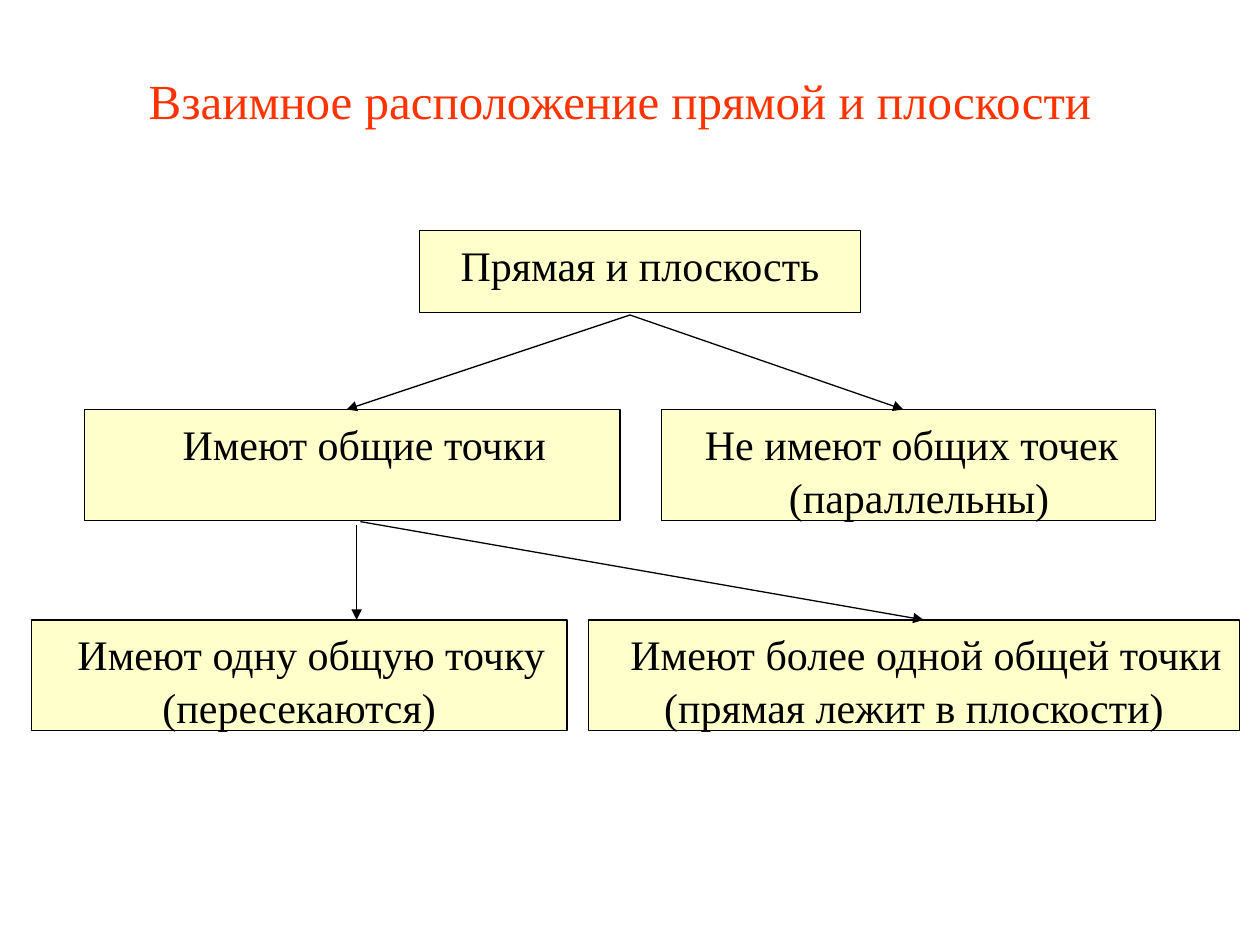
from lxml.etree import SubElement
from pptx import Presentation
from pptx.dml.color import RGBColor as RGB
from pptx.enum.shapes import MSO_CONNECTOR as CONN, MSO_SHAPE as SHAPE
from pptx.enum.text import MSO_ANCHOR as ANCHOR, PP_ALIGN as ALIGN
from pptx.oxml.ns import qn
from pptx.util import Inches, Pt

TITLE = "Взаимное расположение прямой и плоскости"
ROWS = [
    (1.83, 0.65, [
        (3.33, 3.5, [("Прямая и плоскость", 0)]),
    ]),
    (3.25, 0.88, [
        (0.67, 4.25, [("Имеют общие точки", 0.19)]),
        (5.25, 3.92, [("Не имеют общих точек", 0.05), ("(параллельны)", 0.17)]),
    ]),
    (4.92, 0.88, [
        (0.25, 4.25, [("Имеют одну общую точку (пересекаются)", 0.19)]),
        (4.67, 5.17, [("Имеют более одной общей точки (прямая лежит в плоскости)", 0.19)]),
    ]),
]
ARROWS = [
    ((5, 2.5), (2.75, 3.25)),
    ((5, 2.5), (7.17, 3.25)),
    ((2.86, 4.14), (7.33, 4.92)),
    ((2.83, 4.17), (2.83, 4.92)),
]
THEME = {
    "font": "Times New Roman",
    "title": RGB(0xFF, 0x33, 0x00),
    "ink": RGB(0, 0, 0),
    "fill": RGB(0xFF, 0xFF, 0xCC),
    "title_size": Pt(28),
    "box_size": Pt(24),
    "line": Pt(0.75),
    "spacing": 1.05,
}


def style(p, size, color):
    p.alignment = ALIGN.CENTER
    for r in p.runs:
        r.font.name = THEME["font"]
        r.font.size = size
        r.font.color.rgb = color


def outline(sp):
    sp.line.color.rgb = THEME["ink"]
    sp.line.width = THEME["line"]


def add_box(slide, left, top, width, height, lines):
    sp = slide.shapes.add_shape(SHAPE.RECTANGLE, *map(Inches, (left, top, width, height)))
    sp.shadow.inherit = False
    sp.fill.solid()
    sp.fill.fore_color.rgb = THEME["fill"]
    outline(sp)
    tf = sp.text_frame
    tf.word_wrap = True
    tf.vertical_anchor = ANCHOR.TOP
    tf.text = "\n".join(text for text, _ in lines)
    for p, (_, indent) in zip(tf.paragraphs, lines):
        style(p, THEME["box_size"], THEME["ink"])
        p.line_spacing = THEME["spacing"]
        p._p.get_or_add_pPr().set("indent", str(Inches(indent)))


def add_arrow(slide, start, end):
    sp = slide.shapes.add_connector(CONN.STRAIGHT, *map(Inches, start + end))
    outline(sp)
    SubElement(sp.line._get_or_add_ln(), qn("a:tailEnd"), type="triangle")
    SubElement(sp._element.spPr, qn("a:effectLst"))


def main():
    prs = Presentation()
    prs.slide_width, prs.slide_height = Inches(10), Inches(7.5)
    slide = prs.slides.add_slide(prs.slide_layouts[5])

    title = slide.shapes.title
    title.left, title.top, title.width, title.height = map(Inches, (0.67, 0.17, 8.5, 1.25))
    title.text_frame.text = TITLE
    title.text_frame.vertical_anchor = ANCHOR.MIDDLE
    style(title.text_frame.paragraphs[0], THEME["title_size"], THEME["title"])

    for top, height, boxes in ROWS:
        for left, width, lines in boxes:
            add_box(slide, left, top, width, height, lines)
    for start, end in ARROWS:
        add_arrow(slide, start, end)
    prs.save("out.pptx")


if __name__ == "__main__":
    main()
